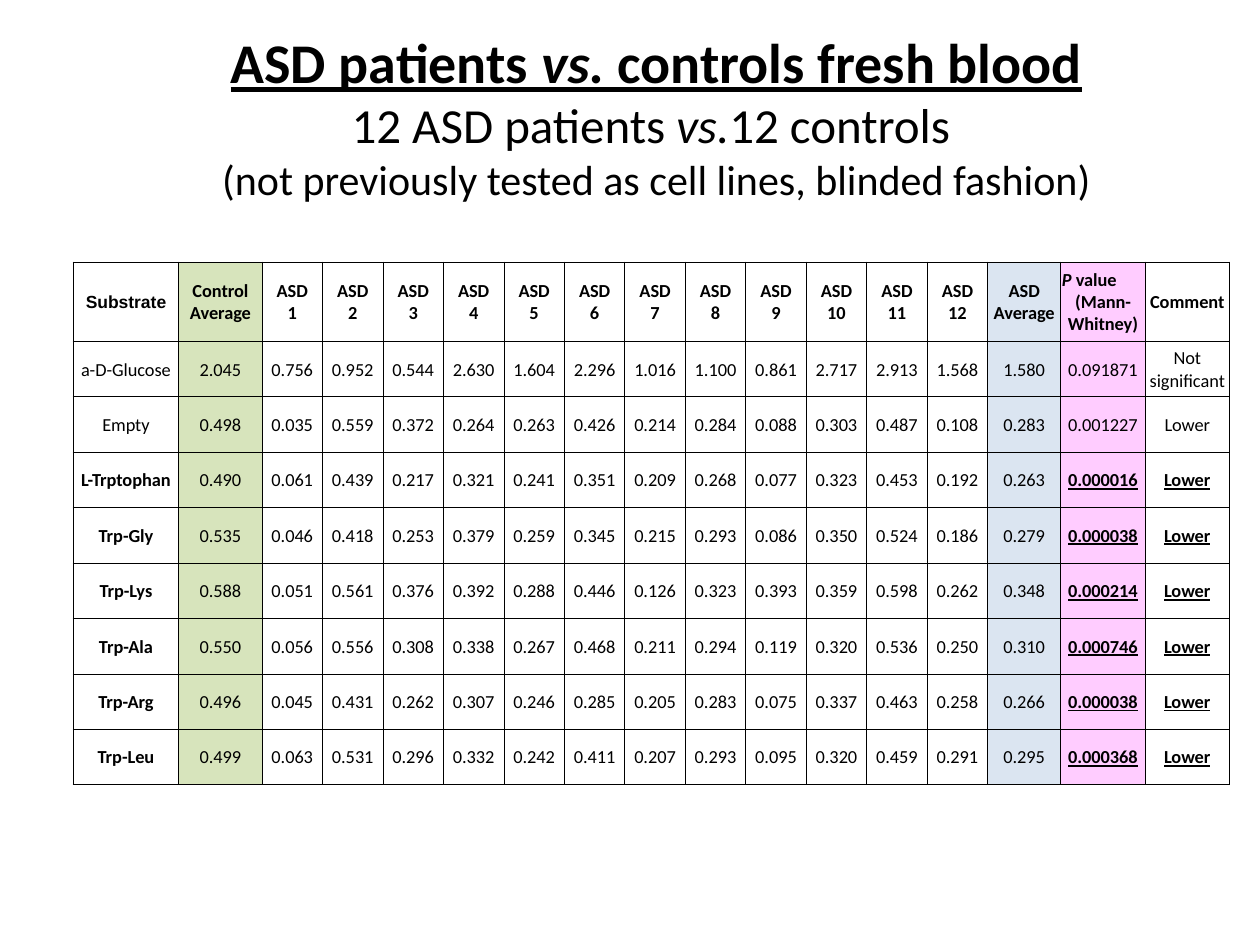
from lxml.etree import SubElement
from pptx import Presentation
from pptx.dml.color import RGBColor
from pptx.enum.text import MSO_ANCHOR, MSO_AUTO_SIZE, PP_ALIGN
from pptx.oxml.ns import qn
from pptx.util import Inches, Pt

WIDTHS = [0.84, 0.66] + [0.48] * 12 + [0.58, 0.67, 0.67]
HEIGHTS = [0.63] + [0.44] * 8
FILLS = {1: "D7E4BC", 14: "DBE5F1", 15: "FFCCFF"}
HEAD = [
    "Substrate", "Control Average", *[f"ASD\n{n}" for n in range(1, 13)],
    "ASD Average", "P value\n(Mann-Whitney)", "Comment",
]
DATA = [
    "a-D-Glucose 2.045 0.756 0.952 0.544 2.630 1.604 2.296 1.016 1.100 0.861 2.717 2.913 1.568 1.580 0.091871 Not significant",
    "Empty 0.498 0.035 0.559 0.372 0.264 0.263 0.426 0.214 0.284 0.088 0.303 0.487 0.108 0.283 0.001227 Lower",
    "L-Trptophan 0.490 0.061 0.439 0.217 0.321 0.241 0.351 0.209 0.268 0.077 0.323 0.453 0.192 0.263 0.000016 Lower",
    "Trp-Gly 0.535 0.046 0.418 0.253 0.379 0.259 0.345 0.215 0.293 0.086 0.350 0.524 0.186 0.279 0.000038 Lower",
    "Trp-Lys 0.588 0.051 0.561 0.376 0.392 0.288 0.446 0.126 0.323 0.393 0.359 0.598 0.262 0.348 0.000214 Lower",
    "Trp-Ala 0.550 0.056 0.556 0.308 0.338 0.267 0.468 0.211 0.294 0.119 0.320 0.536 0.250 0.310 0.000746 Lower",
    "Trp-Arg 0.496 0.045 0.431 0.262 0.307 0.246 0.285 0.205 0.283 0.075 0.337 0.463 0.258 0.266 0.000038 Lower",
    "Trp-Leu 0.499 0.063 0.531 0.296 0.332 0.242 0.411 0.207 0.293 0.095 0.320 0.459 0.291 0.295 0.000368 Lower",
]
TITLE = [
    (["ASD patients ", "vs. ", "controls fresh blood"], 32, True),
    (["12 ASD patients ", "vs.", "12 controls "], 28, False),
    (["(not previously tested as cell lines, blinded fashion)"], 24, False),
]


def paint(fill, tone):
    fill.solid()
    fill.fore_color.rgb = RGBColor.from_string(tone)


def style(para, size, bold=False, line=False, face="Calibri"):
    para.alignment = PP_ALIGN.CENTER
    font = para.font
    font.name, font.size = face, Pt(size)
    font.bold, font.underline = bold, line
    paint(font.fill, "000000")


def add_runs(para, parts):
    for part in parts:
        run = para.add_run()
        run.text = part
        if part.strip() in ("vs.", "P"):
            run.font.italic = True


def add_title(slide):
    box = slide.shapes.title
    box.left, box.top = Inches(0.42), Inches(0.17)
    box.width, box.height = Inches(9.58), Inches(1.51)
    frame = box.text_frame
    frame.word_wrap = True
    frame.auto_size = MSO_AUTO_SIZE.SHAPE_TO_FIT_TEXT
    frame.vertical_anchor = MSO_ANCHOR.TOP
    for row, (parts, size, strong) in enumerate(TITLE):
        para = frame.add_paragraph() if row else frame.paragraphs[0]
        add_runs(para, parts)
        style(para, size, strong, strong)


def add_edges(cell):
    props = cell._tc.get_or_add_tcPr()
    for side in ("lnL", "lnR", "lnT", "lnB"):
        edge = SubElement(props, qn(f"a:{side}"), w=str(Pt(0.5)))
        fill = SubElement(edge, qn("a:solidFill"))
        SubElement(fill, qn("a:srgbClr"), val="000000")


def set_cell(cell, text, tone, size, bold, line, face):
    cell.margin_left = cell.margin_right = cell.margin_top = Inches(0.01)
    cell.margin_bottom = 0
    cell.vertical_anchor = MSO_ANCHOR.MIDDLE
    add_edges(cell)
    if tone:
        paint(cell.fill, tone)
    else:
        cell.fill.background()
    frame = cell.text_frame
    for row, words in enumerate(text.split("\n")):
        para = frame.add_paragraph() if row else frame.paragraphs[0]
        flush = words == "P value"
        add_runs(para, ["P", " value"] if flush else [words])
        style(para, size, bold, line, face)
        if flush:
            para.alignment = PP_ALIGN.LEFT


def add_grid(slide):
    rows = [HEAD] + [row.split(maxsplit=16) for row in DATA]
    table = slide.shapes.add_table(
        len(rows), len(HEAD), Inches(0.58), Inches(2.08),
        Inches(sum(WIDTHS)), Inches(sum(HEIGHTS)),
    ).table
    table.first_row = table.horz_banding = False
    for col, width in zip(table.columns, WIDTHS):
        col.width = Inches(width)
    for row, height in zip(table.rows, HEIGHTS):
        row.height = Inches(height)
    for r, row in enumerate(rows):
        for c, text in enumerate(row):
            line = r > 2 and c > 14
            bold = r == 0 or line or (r > 2 and c == 0)
            first = r == c == 0
            size, face = (10, "Arial") if first else (10.5, "Calibri")
            set_cell(table.cell(r, c), text, FILLS.get(c), size, bold, line, face)


def main():
    deck = Presentation()
    deck.slide_width, deck.slide_height = Inches(10), Inches(7.5)
    slide = deck.slides.add_slide(deck.slide_layouts[5])
    paint(slide.background.fill, "FFFFFF")
    add_title(slide)
    add_grid(slide)
    deck.save("out.pptx")


if __name__ == "__main__":
    main()
